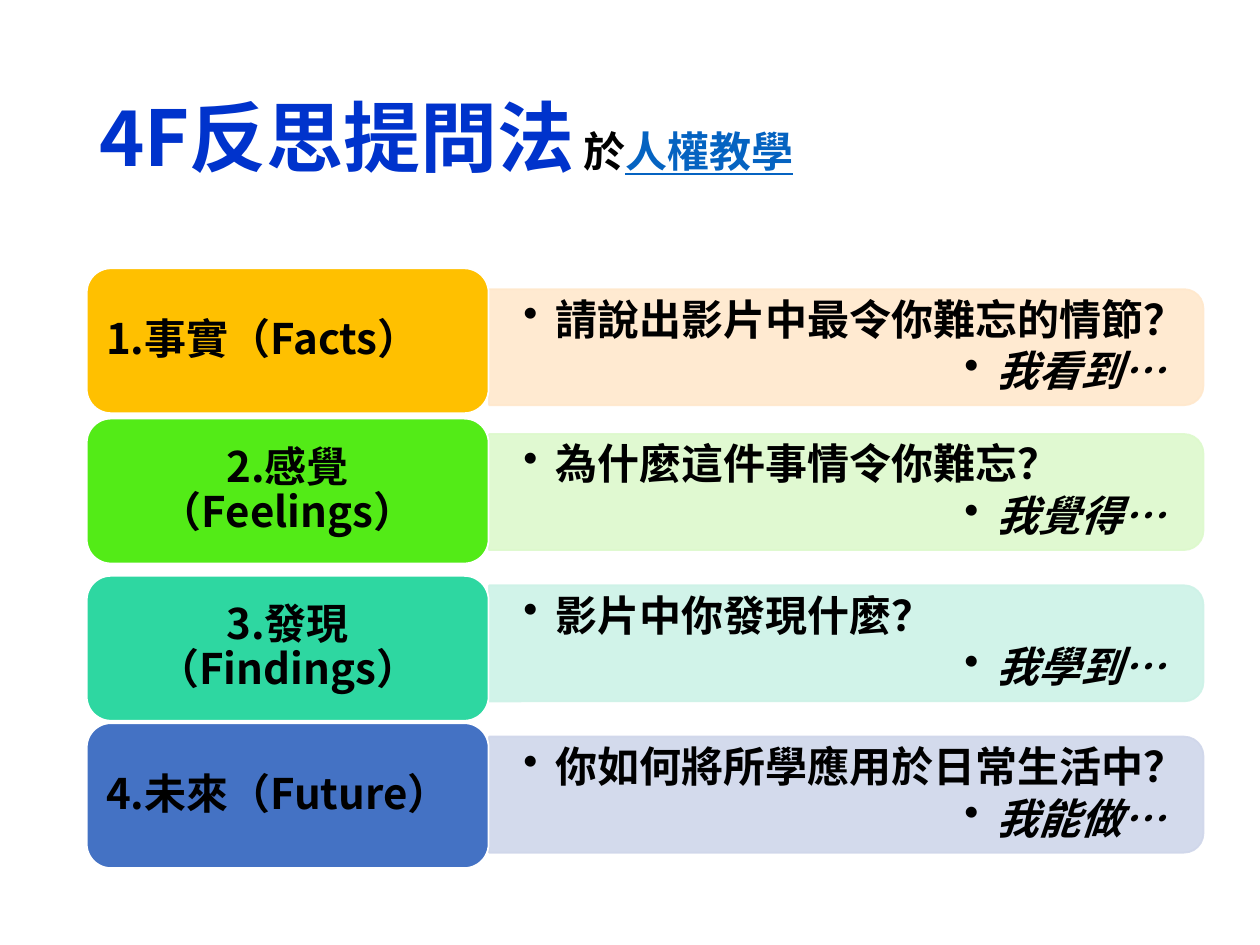
from dataclasses import dataclass

from lxml import etree
from pptx import Presentation
from pptx.dml.color import RGBColor
from pptx.enum.shapes import MSO_SHAPE
from pptx.enum.text import MSO_ANCHOR, PP_ALIGN
from pptx.oxml.ns import qn
from pptx.util import Cm, Pt

LEFT, CENTER, RIGHT = PP_ALIGN.LEFT, PP_ALIGN.CENTER, PP_ALIGN.RIGHT
TOP, MIDDLE = MSO_ANCHOR.TOP, MSO_ANCHOR.MIDDLE
ROUNDED, ROUNDED_TOP = MSO_SHAPE.ROUNDED_RECTANGLE, MSO_SHAPE.ROUND_2_SAME_RECTANGLE

FONT = "Noto Sans CJK SC"
COLORS = {
    "title": "0033CC", "text": "000000", "link": "0563C1", "outline": "FFFFFF",
    "facts": "FFC000", "facts_pale": "FFE8CC",
    "feelings": "53EB17", "feelings_pale": "DDF9CC",
    "findings": "2ED7A1", "findings_pale": "CDF2E7",
    "future": "4472C4", "future_pale": "CFD6EA",
}

# Shared measures in centimetres
HEAD_LEFT, HEAD_WIDTH, HEAD_HEIGHT, HEAD_INSET = 1.75, 8.1, 2.92, 0.14
PANEL_LEFT, PANEL_WIDTH, PANEL_HEIGHT = 9.86, 14.4, 2.34
PROMPT_WIDTH, PROMPT_HEIGHT = 14.3, 2.11
BULLET_INDENT = 0.64


@dataclass
class Step:
    key: str
    label: str
    align: PP_ALIGN
    question: str
    answer: str
    head_top: float
    panel_middle: float


STEPS = [
    Step("facts", "1.事實（Facts）", LEFT, "請說出影片中最令你難忘的情節？", "我看到…", 5.41, 7.0),
    Step("feelings", "2.感覺（Feelings）", CENTER, "為什麼這件事情令你難忘？", "我覺得…", 8.44, 9.92),
    Step("findings", "3.發現（Findings）", CENTER, "影片中你發現什麼？", "我學到…", 11.61, 12.97),
    Step("future", "4.未來（Future）", LEFT, "你如何將所學應用於日常生活中？", "我能做…", 14.58, 16.02),
]


def rgb(key: str) -> RGBColor:
    return RGBColor.from_string(COLORS[key])


def format_run(run, size: float = 24, color: str = "text") -> None:
    run.font.name = FONT
    run.font.size = Pt(size)
    run.font.bold = True
    run.font.color.rgb = rgb(color)
    latin = run.font._element.find(qn("a:latin"))
    east_asian = etree.Element(qn("a:ea"), typeface=FONT)
    latin.addnext(east_asian)


def add_text_frame(slide, left: float, top: float, width: float, height: float, anchor=MIDDLE):
    frame = slide.shapes.add_textbox(Cm(left), Cm(top), Cm(width), Cm(height)).text_frame
    frame.word_wrap = True
    frame.vertical_anchor = anchor
    return frame


def add_block(slide, preset, left: float, top: float, width: float, height: float,
              fill: str, line: str):
    block = slide.shapes.add_shape(preset, Cm(left), Cm(top), Cm(width), Cm(height))
    block.shadow.inherit = False
    block.fill.solid()
    block.fill.fore_color.rgb = rgb(fill)
    block.line.color.rgb = rgb(line)
    block.line.width = Pt(1)
    return block


def add_bullet(paragraph) -> None:
    properties = paragraph._p.get_or_add_pPr()
    properties.set("marL", str(Cm(BULLET_INDENT)))
    properties.set("indent", str(-Cm(BULLET_INDENT)))
    etree.SubElement(properties, qn("a:buChar"), char="•")


def add_panel(slide, step: Step) -> None:
    # The preset stands upright and is turned so its round corners face right
    pale = f"{step.key}_pale"
    panel = add_block(slide, ROUNDED_TOP,
                      PANEL_LEFT + (PANEL_WIDTH - PANEL_HEIGHT) / 2,
                      step.panel_middle - PANEL_WIDTH / 2,
                      PANEL_HEIGHT, PANEL_WIDTH, pale, pale)
    panel.rotation = 90
    for color in panel._element.spPr.iter(qn("a:srgbClr")):
        etree.SubElement(color, qn("a:alpha"), val="90000")

    prompt = add_text_frame(slide, PANEL_LEFT, step.panel_middle - PROMPT_HEIGHT / 2,
                            PROMPT_WIDTH, PROMPT_HEIGHT)
    prompt.margin_left = prompt.margin_right = Cm(0.69)
    prompt.margin_top = prompt.margin_bottom = Cm(0.36)
    prompt.text = f"{step.question}\n{step.answer}"
    for paragraph in prompt.paragraphs:
        paragraph.level = 1
        paragraph.line_spacing = 0.9
        paragraph.space_after = Pt(3.6)
        add_bullet(paragraph)
        format_run(paragraph.runs[0])
    answer = prompt.paragraphs[1]
    answer.alignment = RIGHT
    answer.runs[0].font.italic = True


def add_head(slide, step: Step) -> None:
    add_block(slide, ROUNDED, HEAD_LEFT, step.head_top, HEAD_WIDTH, HEAD_HEIGHT,
              step.key, "outline")
    label = add_text_frame(slide, HEAD_LEFT + HEAD_INSET, step.head_top + HEAD_INSET,
                           HEAD_WIDTH - 2 * HEAD_INSET, HEAD_HEIGHT - 2 * HEAD_INSET)
    label.text = step.label
    paragraph = label.paragraphs[0]
    paragraph.alignment = step.align
    paragraph.line_spacing = 0.9
    format_run(paragraph.runs[0])


def main() -> None:
    presentation = Presentation()
    presentation.slide_width, presentation.slide_height = Cm(25.4), Cm(19.05)
    slide = presentation.slides.add_slide(presentation.slide_layouts[6])

    # Title
    title = add_text_frame(slide, 1.75, 1.02, 21.9, 3.68)
    title.text = "4F反思提問法"
    title.paragraphs[0].line_spacing = 0.9
    format_run(title.paragraphs[0].runs[0], 44, "title")

    # The four reflection steps
    for step in STEPS:
        add_panel(slide, step)
        add_head(slide, step)

    # Subject beside the title
    subject = add_text_frame(slide, 11.51, 2.41, 7.09, 1.27, TOP).paragraphs[0]
    subject.text = "於"
    format_run(subject.runs[0])
    topic = subject.add_run()
    topic.text = "人權教學"
    format_run(topic, color="link")
    topic.font.underline = True

    presentation.save("out.pptx")


if __name__ == "__main__":
    main()
